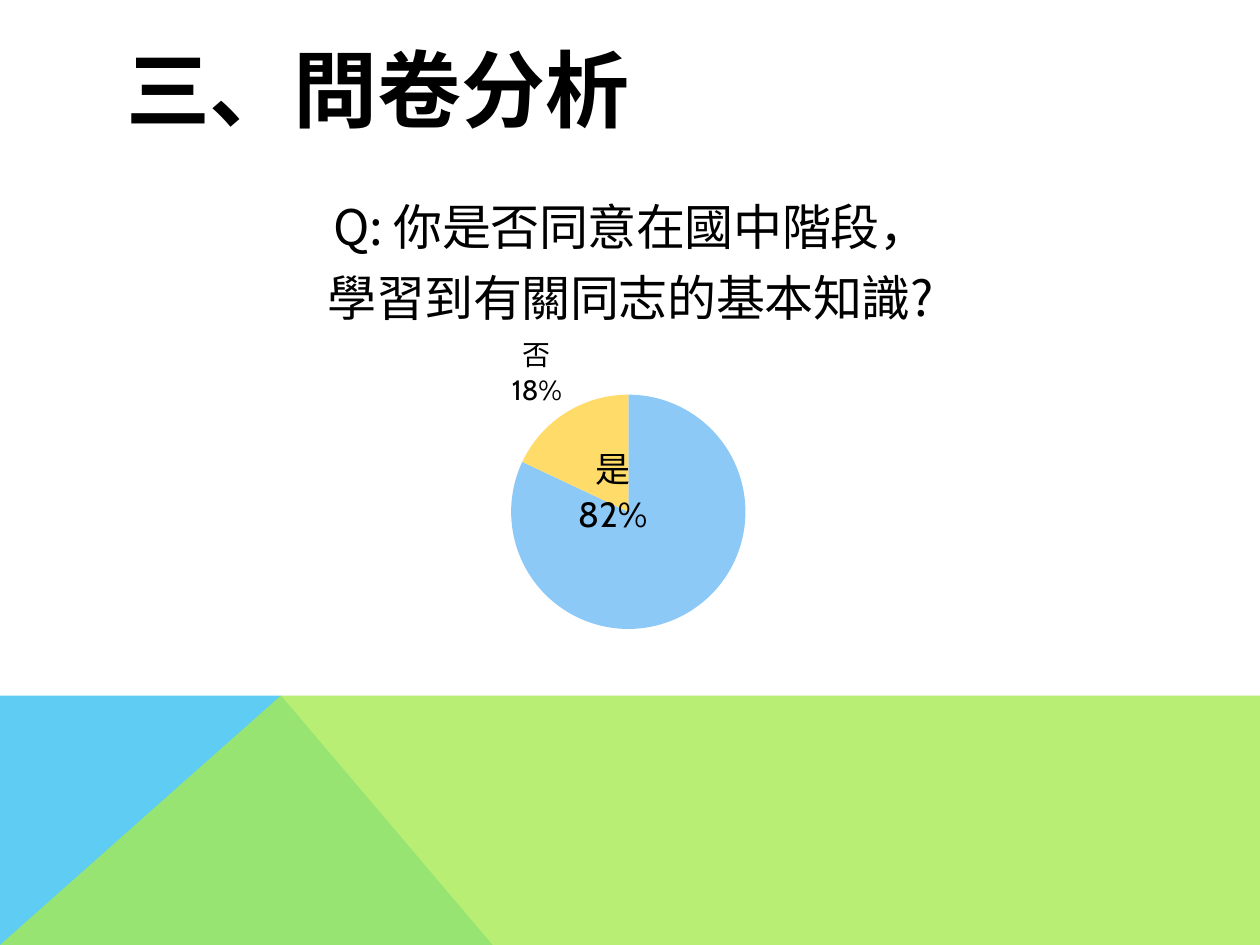
from lxml import etree
from pptx import Presentation
from pptx.chart.data import CategoryChartData
from pptx.dml.color import RGBColor
from pptx.enum.chart import XL_CHART_TYPE, XL_LABEL_POSITION
from pptx.enum.text import MSO_ANCHOR, PP_ALIGN
from pptx.oxml import parse_xml
from pptx.oxml.ns import qn
from pptx.util import Inches, Pt

PIE = XL_CHART_TYPE.PIE
CENTER, OUTSIDE_END = XL_LABEL_POSITION.CENTER, XL_LABEL_POSITION.OUTSIDE_END
MIDDLE = MSO_ANCHOR.MIDDLE
ALIGN_LEFT, ALIGN_CENTER = PP_ALIGN.LEFT, PP_ALIGN.CENTER
CJK_FONT, LATIN_FONT = "Noto Sans CJK SC", "Cabin"
CHART_NS = "http://schemas.openxmlformats.org/drawingml/2006/chart"


def format_font(font, size, name, bold=False):
    font.size, font.name, font.bold = Pt(size), name, bold
    font.color.rgb = RGBColor.from_string("000000")
    # East Asian typeface for the Chinese text
    properties = font._element if hasattr(font, "_element") else font._rPr
    latin = properties.find(qn("a:latin"))
    east_asian = etree.Element(qn("a:ea"), typeface=CJK_FONT)
    latin.addnext(east_asian)


def manual_layout(**values):
    items = "".join(f'<c:{key} val="{value}"/>' for key, value in values.items())
    return parse_xml(f'<c:layout xmlns:c="{CHART_NS}"><c:manualLayout>{items}'
                     "</c:manualLayout></c:layout>")


presentation = Presentation()
presentation.slide_width, presentation.slide_height = Inches(10), Inches(7.5)
slide = presentation.slides.add_slide(presentation.slide_layouts[5])

# Bottom band: blue corner under a translucent green area
bands = [
    ("5ECCF3", None, [(0, 7.5), (0, 5.52), (2.23, 5.52), (3.91, 7.5)]),
    ("A7EA52", 80, [(0, 7.5), (2.23, 5.52), (10, 5.52), (10, 7.5)]),
]
for color, opacity, points in bands:
    corners = [(Inches(x), Inches(y)) for x, y in points]
    builder = slide.shapes.build_freeform(*corners[0], scale=1.0)
    builder.add_line_segments(corners[1:], close=True)
    band = builder.convert_to_shape()
    band.shadow.inherit = False
    band.line.fill.background()
    band.fill.solid()
    band.fill.fore_color.rgb = RGBColor.from_string(color)
    if opacity:
        fill_color = band._element.spPr.find(qn("a:solidFill"))[0]
        etree.SubElement(fill_color, qn("a:alpha"), val=str(opacity * 1000))

# Slide title
title = slide.shapes.title
title.left, title.top = Inches(0.9), Inches(0.4)
title.width, title.height = Inches(8.22), Inches(0.6)
title.text_frame.text = "三、問卷分析"
title.text_frame.vertical_anchor = MIDDLE
title.text_frame.paragraphs[0].alignment = ALIGN_LEFT
format_font(title.text_frame.paragraphs[0].runs[0].font, 48, CJK_FONT, True)

# Survey pie chart
chart_data = CategoryChartData()
chart_data.categories = ["是", "否"]
chart_data.add_series("Series 1", (82, 18))
chart = slide.shapes.add_chart(
    PIE, Inches(0.43), Inches(1.07), Inches(9.3), Inches(4.75), chart_data).chart
chart.has_legend = False
format_font(chart.font, 10, LATIN_FONT)

# Question as chart title
chart.has_title = True
question = chart.chart_title.text_frame
question.text = "Q: 你是否同意在國中階段，\n學習到有關同志的基本知識?"
for paragraph in question.paragraphs:
    paragraph.alignment = ALIGN_CENTER
    format_font(paragraph.runs[0].font, 28, CJK_FONT)
title_element = chart.chart_title._element
for old_layout in title_element.findall(qn("c:layout")):
    title_element.remove(old_layout)
title_element.find(qn("c:tx")).addnext(
    manual_layout(xMode="edge", yMode="edge", x=0.23, y=0.08))

# Pie position inside the chart
plot_area = chart._chartSpace.chart.plotArea
for old_layout in plot_area.findall(qn("c:layout")):
    plot_area.remove(old_layout)
plot_area.insert(0, manual_layout(layoutTarget="inner", xMode="edge", yMode="edge",
                                  x=0.39, y=0.43, w=0.2, h=0.4))

# Slices and their labels
slices = [("8CC9F7", 20, CENTER, (-0.04, -0.12)), ("FFDB69", 16, OUTSIDE_END, None)]
for index, (color, size, position, offset) in enumerate(slices):
    point = chart.plots[0].series[0].points[index]
    point.format.fill.solid()
    point.format.fill.fore_color.rgb = RGBColor.from_string(color)
    point.format.line.fill.background()
    label = point.data_label
    format_font(label.font, size, LATIN_FONT)
    label.position = position
    label_element = label._dLbl
    for tag, shown in (("showVal", 0), ("showCatName", 1), ("showPercent", 1)):
        label_element.find(qn(f"c:{tag}")).set("val", str(shown))
    etree.SubElement(label_element, qn("c:separator")).text = "\n"
    if offset:
        label_element.insert(1, manual_layout(x=offset[0], y=offset[1]))

presentation.save("out.pptx")
